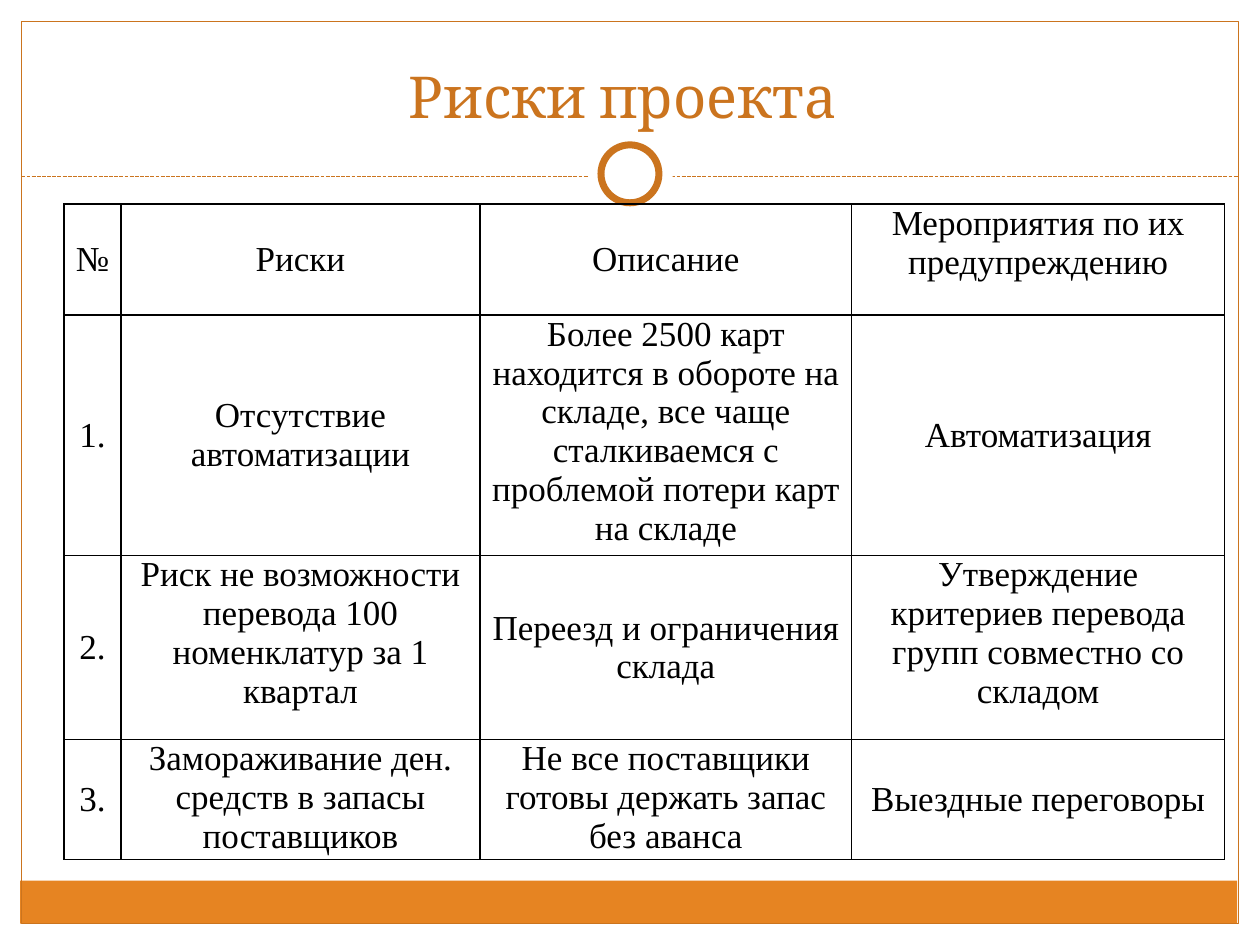
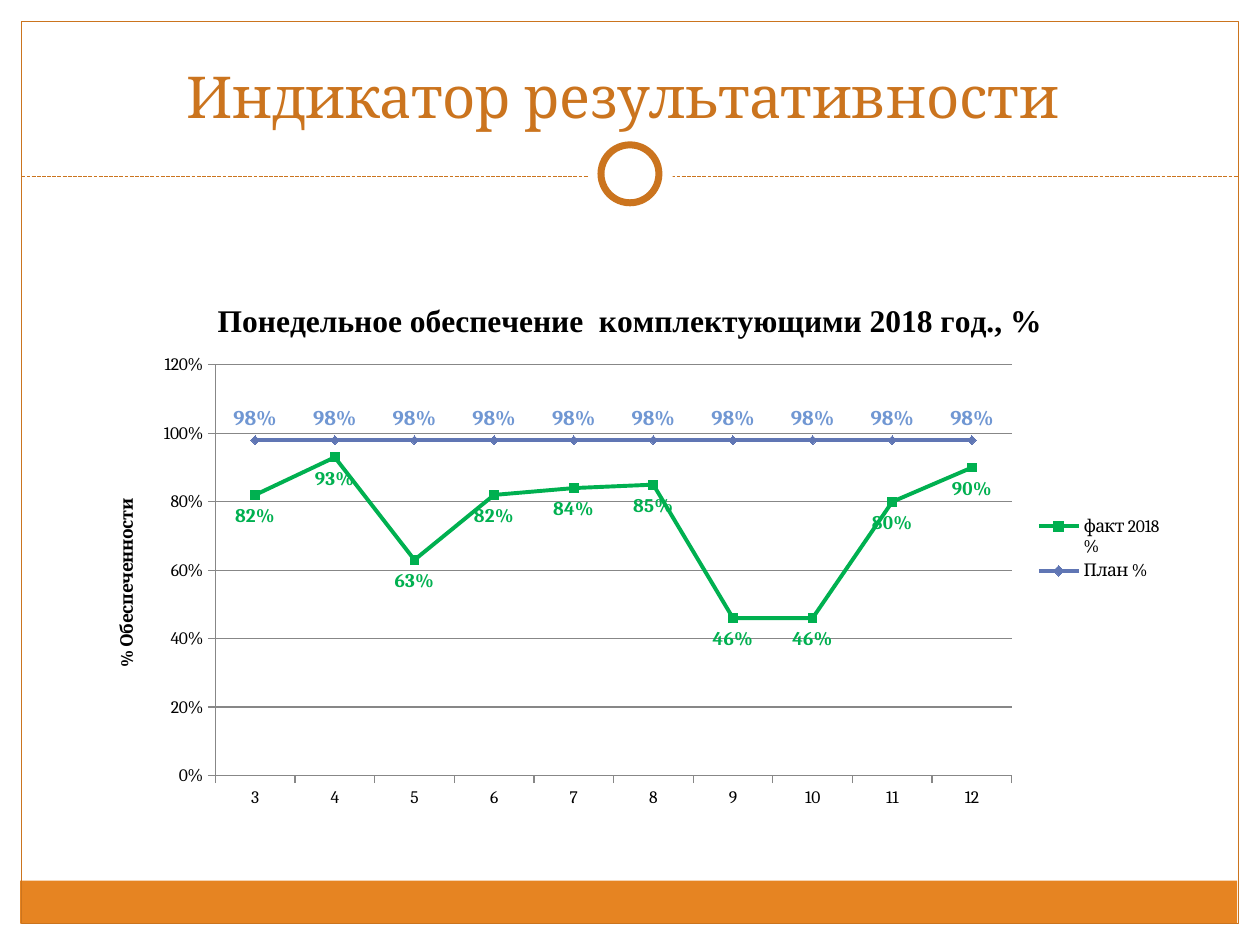
"""Build two project slides: a risk table and a weekly supply chart."""
from dataclasses import dataclass
from typing import NamedTuple, Optional

from lxml.etree import SubElement
from pptx import Presentation
from pptx.chart.data import CategoryChartData
from pptx.dml.color import RGBColor
from pptx.enum.chart import XL_CHART_TYPE, XL_LABEL_POSITION, XL_LEGEND_POSITION, XL_MARKER_STYLE
from pptx.enum.dml import MSO_LINE
from pptx.enum.shapes import MSO_CONNECTOR, MSO_SHAPE
from pptx.enum.text import MSO_ANCHOR, MSO_AUTO_SIZE, PP_ALIGN
from pptx.oxml import parse_xml
from pptx.oxml.ns import nsdecls, qn
from pptx.util import Inches, Pt


@dataclass(frozen=True)
class Theme:
    """Colours, fonts and type sizes of the deck."""
    white: str = "FFFFFF"
    black: str = "000000"
    band: str = "E68422"
    accent: str = "CB741E"
    grid: str = "878787"
    fact: str = "00B050"
    plan: str = "6076B4"
    plan_label: str = "7097D3"
    font: str = "Cambria"
    table_font: str = "Times New Roman"
    title_size: float = 33
    table_size: float = 20
    chart_title_size: float = 18
    chart_size: float = 10


THEME = Theme()


class Decoration(NamedTuple):
    """A preset shape repeated on every slide."""
    kind: MSO_SHAPE
    left: float
    top: float
    width: float
    height: float
    fill: Optional[str] = None
    line: Optional[str] = None
    line_width: float = 0.75


class RiskCell(NamedTuple):
    """Text of a table cell and its vertical anchor."""
    text: str
    anchor: MSO_ANCHOR = MSO_ANCHOR.MIDDLE


class Indicator(NamedTuple):
    """A chart series with its colours, marker and labels."""
    name: str
    values: list[float]
    color: str
    marker: XL_MARKER_STYLE
    label_color: str
    label_size: float
    label_position: XL_LABEL_POSITION


BACKDROP = [
    Decoration(MSO_SHAPE.RECTANGLE, 0.16, 6.99, 9.66, 0.34, fill=THEME.band),
    Decoration(MSO_SHAPE.RECTANGLE, 0.17, 0.17, 9.66, 7.16, line=THEME.accent),
]
RING = [
    Decoration(MSO_SHAPE.OVAL, 4.67, 1.05, 0.67, 0.67, fill=THEME.white),
    Decoration(MSO_SHAPE.OVAL, 4.77, 1.15, 0.46, 0.46, THEME.white, THEME.accent, 4),
]

TOP = MSO_ANCHOR.TOP
COLUMN_WIDTHS = [0.45, 2.85, 2.95, 2.96]
ROW_HEIGHTS = [0.88, 1.91, 1.46, 0.95]
RISKS = [
    [RiskCell("№"), RiskCell("Риски"), RiskCell("Описание"),
     RiskCell("Мероприятия по их предупреждению", TOP)],
    [RiskCell("1."), RiskCell("Отсутствие автоматизации"),
     RiskCell("Более 2500 карт находится в обороте на складе, все чаще "
              "сталкиваемся с проблемой потери карт на складе", TOP),
     RiskCell("Автоматизация")],
    [RiskCell("2."),
     RiskCell("Риск не возможности перевода 100 номенклатур за 1 квартал", TOP),
     RiskCell("Переезд и ограничения склада"),
     RiskCell("Утверждение критериев перевода групп совместно со складом", TOP)],
    [RiskCell("3."),
     RiskCell("Замораживание ден. средств в запасы поставщиков", TOP),
     RiskCell("Не все поставщики готовы держать запас без аванса", TOP),
     RiskCell("Выездные переговоры")],
]

WEEKS = [str(week) for week in range(3, 13)]
INDICATORS = [
    Indicator("факт 2018\n%", [0.82, 0.93, 0.63, 0.82, 0.84, 0.85, 0.46, 0.46, 0.8, 0.9],
              THEME.fact, XL_MARKER_STYLE.SQUARE, THEME.fact, 11, XL_LABEL_POSITION.BELOW),
    Indicator("План % ", [0.98] * len(WEEKS),
              THEME.plan, XL_MARKER_STYLE.DIAMOND, THEME.plan_label, 12, XL_LABEL_POSITION.ABOVE),
]
PLOT_LAYOUT = {"x": 0.12, "y": 0.16, "w": 0.73, "h": 0.76}


def rgb(color: str) -> RGBColor:
    """Turn a hex string into a colour."""
    return RGBColor.from_string(color)


def format_font(font, *, size: float, color: str = THEME.black,
                name: str = THEME.font, bold: bool = False) -> None:
    """Apply a complete font format."""
    font.size, font.name, font.bold = Pt(size), name, bold
    font.color.rgb = rgb(color)


def write_text(frame, text: str, *, align: PP_ALIGN = PP_ALIGN.CENTER, **font_format) -> None:
    """Fill a text frame with one formatted paragraph."""
    para = frame.paragraphs[0]
    para.alignment = align
    span = para.add_run()
    span.text = text
    format_font(span.font, **font_format)


def format_line(line, color: str, width: float) -> None:
    """Give a line its colour and width."""
    line.color.rgb = rgb(color)
    line.width = Pt(width)


def draw_decoration(slide, item: Decoration) -> None:
    """Draw one shared shape."""
    lengths = map(Inches, (item.left, item.top, item.width, item.height))
    shape = slide.shapes.add_shape(item.kind, *lengths)
    shape.shadow.inherit = False
    if item.fill:
        shape.fill.solid()
        shape.fill.fore_color.rgb = rgb(item.fill)
    else:
        shape.fill.background()
    if item.line:
        format_line(shape.line, item.line, item.line_width)
    else:
        shape.line.fill.background()


def draw_divider(slide) -> None:
    """Draw the dashed line under the title."""
    divider = slide.shapes.add_connector(
        MSO_CONNECTOR.STRAIGHT, Inches(0.17), Inches(1.4), Inches(9.83), Inches(1.4))
    format_line(divider.line, THEME.accent, 0.75)
    divider.line.dash_style = MSO_LINE.SQUARE_DOT
    SubElement(divider._element.spPr, qn("a:effectLst"))


def add_page(deck, title: str):
    """Add a slide with the shared frame, ring and title."""
    page = deck.slides.add_slide(deck.slide_layouts[5])
    for item in BACKDROP:
        draw_decoration(page, item)
    draw_divider(page)
    for item in RING:
        draw_decoration(page, item)
    box = page.shapes.title
    box.left, box.top, box.width, box.height = map(Inches, (0.33, 0.25, 9.33, 0.83))
    frame = box.text_frame
    frame.auto_size = MSO_AUTO_SIZE.NONE
    frame.vertical_anchor = MSO_ANCHOR.BOTTOM
    write_text(frame, title, size=THEME.title_size, color=THEME.accent)
    return page


def add_borders(cell) -> None:
    """Outline a table cell on its four sides."""
    properties = cell._tc.get_or_add_tcPr()
    for side in "LRTB":
        properties.append(parse_xml(
            f'<a:ln{side} {nsdecls("a")} w="{Pt(1)}"><a:solidFill>'
            f'<a:srgbClr val="{THEME.black}"/></a:solidFill></a:ln{side}>'))


def add_risk_table(page) -> None:
    """Add the table of risks and countermeasures."""
    table = page.shapes.add_table(
        len(ROW_HEIGHTS), len(COLUMN_WIDTHS), Inches(0.51), Inches(1.62),
        Inches(sum(COLUMN_WIDTHS)), Inches(sum(ROW_HEIGHTS))).table
    table.first_row = table.horz_banding = False
    for column, width in zip(table.columns, COLUMN_WIDTHS):
        column.width = Inches(width)
    for row, height, risks in zip(table.rows, ROW_HEIGHTS, RISKS):
        row.height = Inches(height)
        for cell, risk in zip(row.cells, risks):
            cell.margin_left = cell.margin_right = Inches(0.07)
            cell.margin_top = cell.margin_bottom = 0
            cell.vertical_anchor = risk.anchor
            add_borders(cell)
            cell.fill.background()
            write_text(cell.text_frame, risk.text, size=THEME.table_size, name=THEME.table_font)


def format_series(series, indicator: Indicator) -> None:
    """Style a series, its markers and its labels."""
    series.smooth = False
    format_line(series.format.line, indicator.color, 2.25)
    marker = series.marker
    marker.style, marker.size = indicator.marker, 5
    marker.format.fill.solid()
    marker.format.fill.fore_color.rgb = rgb(indicator.color)
    format_line(marker.format.line, indicator.color, 0.75)
    labels = series.data_labels
    labels.show_value = True
    labels.position = indicator.label_position
    labels.number_format, labels.number_format_is_linked = "0%", False
    format_font(labels.font, size=indicator.label_size, color=indicator.label_color, bold=True)


def place_plot(chart) -> None:
    """Fix the inner plot area within the chart."""
    plot_area = chart._chartSpace.chart.plotArea
    for old_layout in plot_area.findall(qn("c:layout")):
        plot_area.remove(old_layout)
    modes = '<c:xMode val="edge"/><c:yMode val="edge"/>'
    sizes = "".join(f'<c:{key} val="{value}"/>' for key, value in PLOT_LAYOUT.items())
    plot_area.insert(0, parse_xml(
        f'<c:layout {nsdecls("c")}><c:manualLayout><c:layoutTarget val="inner"/>'
        f'{modes}{sizes}</c:manualLayout></c:layout>'))


def add_supply_chart(page) -> None:
    """Add the line chart of actual and planned supply."""
    data = CategoryChartData(number_format="0%")
    data.categories = WEEKS
    for indicator in INDICATORS:
        data.add_series(indicator.name, indicator.values)
    chart = page.shapes.add_chart(
        XL_CHART_TYPE.LINE_MARKERS, Inches(0.67), Inches(2.21),
        Inches(8.66), Inches(4.29), data).chart
    format_font(chart.font, size=THEME.chart_size)
    chart.has_title = True
    write_text(chart.chart_title.text_frame, "Понедельное обеспечение  комплектующими 2018 год., %",
               size=THEME.chart_title_size, name=THEME.table_font, bold=True)
    chart.has_legend = True
    chart.legend.position = XL_LEGEND_POSITION.RIGHT
    chart.legend.include_in_layout = False
    chart.plots[0].vary_by_categories = False
    for series, indicator in zip(chart.plots[0].series, INDICATORS):
        format_series(series, indicator)
    value_axis = chart.value_axis
    value_axis.minimum_scale, value_axis.maximum_scale, value_axis.major_unit = 0, 1.2, 0.2
    value_axis.tick_labels.number_format = "0%"
    value_axis.tick_labels.number_format_is_linked = False
    write_text(value_axis.axis_title.text_frame, "% Обеспеченности ",
               size=THEME.chart_size, bold=True)
    for line in (value_axis.format.line, value_axis.major_gridlines.format.line,
                 chart.category_axis.format.line):
        format_line(line, THEME.grid, 0.75)
    place_plot(chart)


def main() -> None:
    """Build and save the deck."""
    deck = Presentation()
    deck.slide_width, deck.slide_height = Inches(10), Inches(7.5)
    add_risk_table(add_page(deck, "Риски проекта "))
    add_supply_chart(add_page(deck, "Индикатор результативности "))
    deck.save("out.pptx")


if __name__ == "__main__":
    main()
